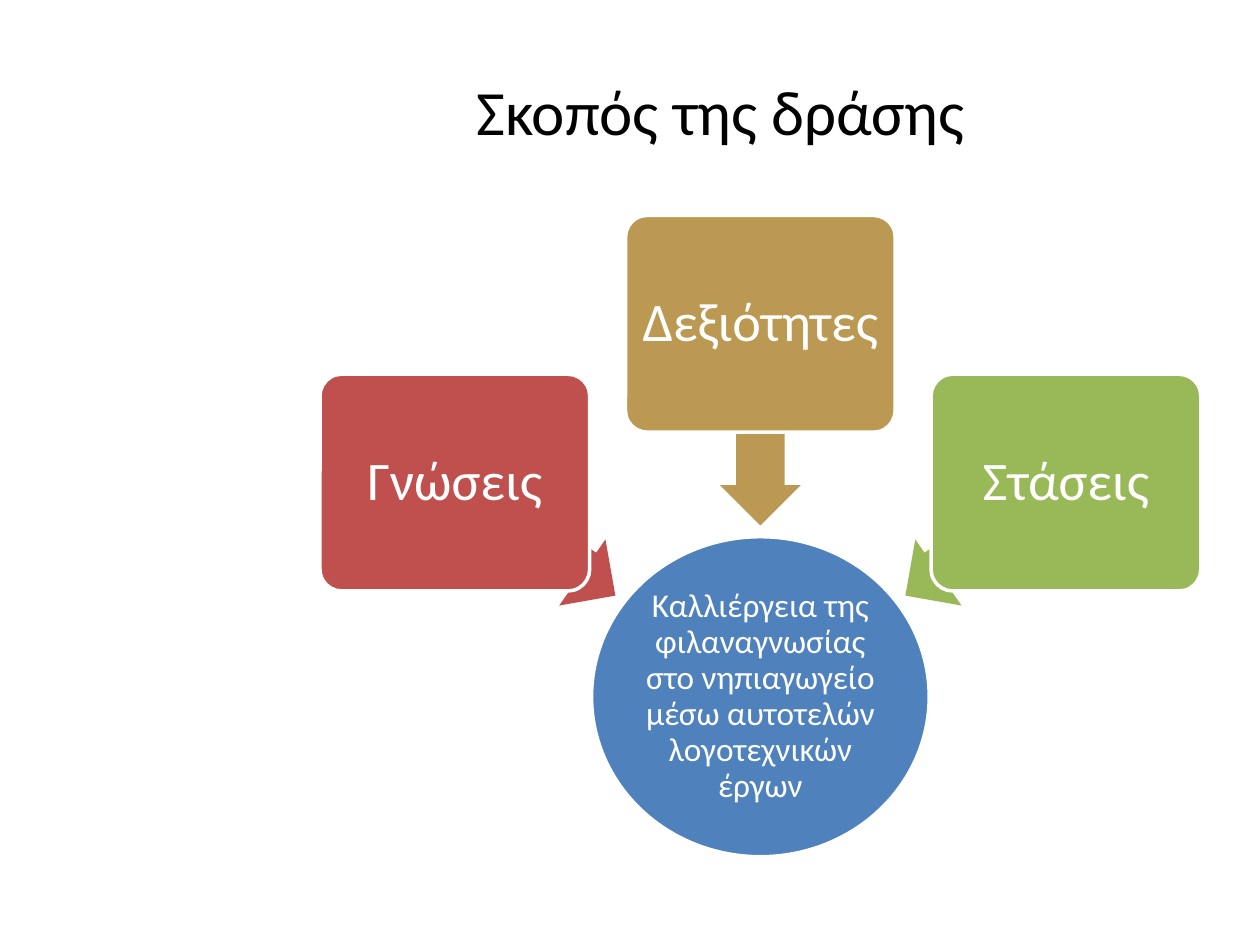
from dataclasses import dataclass

from pptx import Presentation
from pptx.dml.color import RGBColor
from pptx.enum.shapes import MSO_SHAPE
from pptx.enum.text import MSO_ANCHOR, PP_ALIGN
from pptx.util import Inches, Pt

WHITE = RGBColor(0xFF, 0xFF, 0xFF)
BLACK = RGBColor(0x00, 0x00, 0x00)
BLUE = RGBColor(0x4F, 0x81, 0xBD)
RED = RGBColor(0xBF, 0x50, 0x4D)
GOLD = RGBColor(0xBB, 0x99, 0x52)
GREEN = RGBColor(0x99, 0xB9, 0x58)

FONT = "Calibri"
CARD_WIDTH, CARD_HEIGHT = 2.14, 1.72
SIDE_DROP = 1.26
GOAL_WIDTH, GOAL_HEIGHT = 2.68, 2.54
ARROW_HEIGHT = 0.64
ARROW_REACH = 1.79

AIMS = [
    ("Γνώσεις", RED, -1, 215, 1.56, 2.57),
    ("Δεξιότητες", GOLD, 0, 270, 1.6, 1.66),
    ("Στάσεις", GREEN, 1, 325, 1.56, 2.57),
]


@dataclass
class Box:
    left: float
    top: float
    width: float
    height: float

    def centred(self, across, down, width, height):
        center = self.left + self.width / 2 + across
        return Box(center - width / 2, self.top + down - height / 2, width, height)

    def lengths(self):
        return [Inches(value) for value in (self.left, self.top, self.width, self.height)]


def write_text(shape, text, size, color, margins, line_spacing=None):
    frame = shape.text_frame
    frame.word_wrap = True
    frame.vertical_anchor = MSO_ANCHOR.MIDDLE
    frame.margin_left = frame.margin_right = Inches(margins[0])
    frame.margin_top = frame.margin_bottom = Inches(margins[1])
    paragraph = frame.paragraphs[0]
    paragraph.text = text
    paragraph.alignment = PP_ALIGN.CENTER
    paragraph.line_spacing = line_spacing
    paragraph.font.name = FONT
    paragraph.font.size = Pt(size)
    paragraph.font.color.rgb = color


def add_filled(slide, kind, box, color, outlined=True):
    shape = slide.shapes.add_shape(kind, *box.lengths())
    shape.shadow.inherit = False
    shape.fill.solid()
    shape.fill.fore_color.rgb = color
    if outlined:
        shape.line.color.rgb = WHITE
        shape.line.width = Pt(2)
    else:
        shape.line.fill.background()
    return shape


def add_title(slide, box):
    title = slide.shapes.add_textbox(*box.lengths())
    write_text(title, "Σκοπός της δράσης", 36, BLACK, (0.1, 0.05))


def add_goal(slide, box):
    goal = add_filled(slide, MSO_SHAPE.OVAL, box, BLUE)
    text = "Καλλιέργεια της φιλαναγνωσίας στο νηπιαγωγείο μέσω αυτοτελών λογοτεχνικών έργων"
    write_text(goal, text, 19, WHITE, (0.01, 0.01), 0.9)


def add_arrow(slide, box, color, rotation):
    arrow = add_filled(slide, MSO_SHAPE.LEFT_ARROW, box, color, outlined=False)
    arrow.adjustments[0] = 0.6
    arrow.adjustments[1] = 0.5
    arrow.rotation = rotation


def add_card(slide, box, text, color):
    card = add_filled(slide, MSO_SHAPE.ROUNDED_RECTANGLE, box, color)
    card.adjustments[0] = 0.1
    write_text(card, text, 31, WHITE, (0.06, 0.06), 0.9)


def add_diagram(slide, box):
    goal_center = box.height - GOAL_HEIGHT / 2
    add_goal(slide, box.centred(0, goal_center, GOAL_WIDTH, GOAL_HEIGHT))
    card_step = (box.width - CARD_WIDTH) / 2
    for text, color, side, rotation, arrow_length, arrow_center in AIMS:
        arrow_box = box.centred(side * ARROW_REACH, arrow_center, arrow_length, ARROW_HEIGHT)
        add_arrow(slide, arrow_box, color, rotation)
        card_center = CARD_HEIGHT / 2 + abs(side) * SIDE_DROP
        card_box = box.centred(side * card_step, card_center, CARD_WIDTH, CARD_HEIGHT)
        add_card(slide, card_box, text, color)


def main():
    presentation = Presentation()
    presentation.slide_width = Inches(10)
    presentation.slide_height = Inches(7.5)
    slide = presentation.slides.add_slide(presentation.slide_layouts[6])
    add_diagram(slide, Box(2.54, 1.71, 6.99, 5.09))
    add_title(slide, Box(1.22, 0.25, 9, 1.25))
    presentation.save("out.pptx")


if __name__ == "__main__":
    main()
